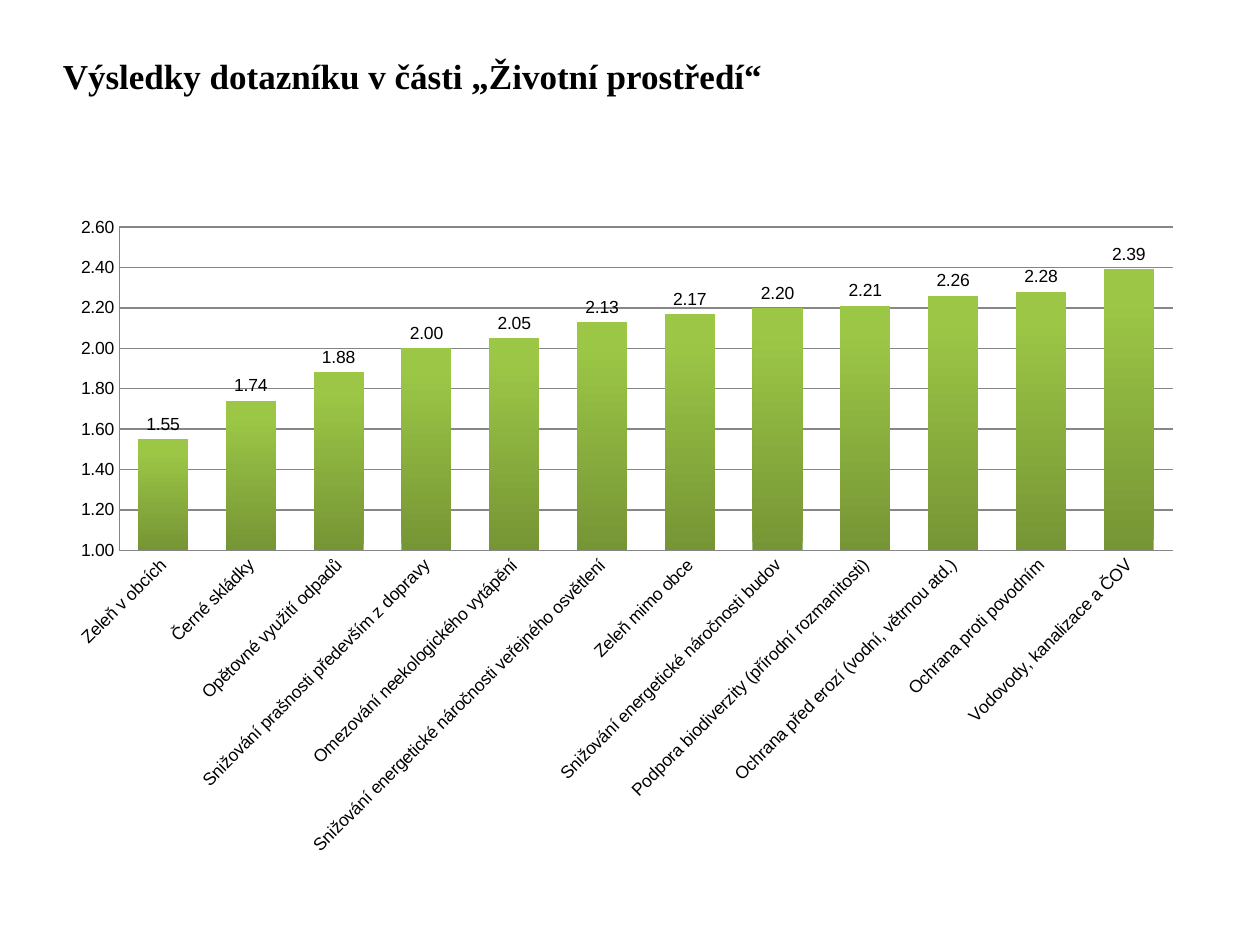
from lxml import etree
from pptx import Presentation
from pptx.chart.data import CategoryChartData
from pptx.dml.color import RGBColor
from pptx.enum.chart import XL_CHART_TYPE, XL_LABEL_POSITION, XL_TICK_MARK
from pptx.enum.text import MSO_ANCHOR, PP_ALIGN
from pptx.oxml.ns import qn
from pptx.util import Cm, Pt

COLUMN = XL_CHART_TYPE.COLUMN_CLUSTERED
OUTSIDE = XL_LABEL_POSITION.OUTSIDE_END
NO_TICK = XL_TICK_MARK.NONE
MIDDLE = MSO_ANCHOR.MIDDLE
CENTER = PP_ALIGN.CENTER

BLACK = "000000"
GRAY = "868686"
FORMAT = "#,##0.00"
SCORES = {
    "Zeleň v obcích": 1.55,
    "Černé skládky": 1.74,
    "Opětovné využití odpadů": 1.88,
    "Snižování prašnosti především z dopravy": 2.00,
    "Omezování neekologického vytápění": 2.05,
    "Snižování energetické náročnosti veřejného osvětlení": 2.13,
    "Zeleň mimo obce": 2.17,
    "Snižování energetické náročnosti budov": 2.20,
    "Podpora biodiverzity (přírodní rozmanitosti)": 2.21,
    "Ochrana před erozí (vodní, větrnou atd.)": 2.26,
    "Ochrana proti povodním": 2.28,
    "Vodovody, kanalizace a ČOV": 2.39,
}


def color(code):
    """Turn a hex string into a colour."""
    return RGBColor.from_string(code)


def style_font(font, name, size):
    """Set a black font of the given name and size."""
    font.name = name
    font.size = Pt(size)
    font.color.rgb = color(BLACK)


def style_line(line):
    """Set the thin gray line of axes and grid."""
    line.color.rgb = color(GRAY)
    line.width = Pt(0.75)


def add_title(slide, text):
    """Add the bold heading, raised above the middle of its box."""
    box = slide.shapes.add_textbox(Cm(0), Cm(0.33), Cm(16.64), Cm(3.18))
    frame = box.text_frame
    frame.word_wrap = True
    frame.vertical_anchor = MIDDLE
    frame.margin_bottom = Cm(0.91)
    para = frame.paragraphs[0]
    para.alignment = CENTER
    run = para.add_run()
    run.text = text
    run.font.bold = True
    style_font(run.font, "Times New Roman", 20)


def place_plot(chart, x, y, w, h):
    """Fix the inner plot area as fractions of the chart."""
    area = chart._chartSpace.find(".//" + qn("c:plotArea"))
    for old in area.findall(qn("c:layout")):
        area.remove(old)
    layout = etree.Element(qn("c:layout"))
    area.insert(0, layout)
    manual = etree.SubElement(layout, qn("c:manualLayout"))
    rules = {"layoutTarget": "inner", "xMode": "edge", "yMode": "edge",
             "x": x, "y": y, "w": w, "h": h}
    for tag, value in rules.items():
        etree.SubElement(manual, qn("c:" + tag)).set("val", str(value))


def style_axes(chart):
    """Set scale, grid, lines and slanted category labels."""
    cats, vals = chart.category_axis, chart.value_axis
    for axis in (cats, vals):
        axis.major_tick_mark = NO_TICK
        axis.minor_tick_mark = NO_TICK
        style_font(axis.tick_labels.font, "Arial", 10)
        style_line(axis.format.line)
    body = cats._element.find(qn("c:txPr")).find(qn("a:bodyPr"))
    body.set("rot", "-2700000")
    body.set("vert", "horz")
    vals.minimum_scale = 1
    vals.maximum_scale = 2.6
    vals.major_unit = 0.2
    vals.has_major_gridlines = True
    style_line(vals.major_gridlines.format.line)
    vals.tick_labels.number_format = FORMAT
    vals.tick_labels.number_format_is_linked = False


def style_bars(plot):
    """Give the columns a green gradient and value labels."""
    plot.gap_width = 75
    plot.vary_by_categories = False
    fill = plot.series[0].format.fill
    fill.gradient()
    fill.gradient_angle = 90
    for stop, code, pos in zip(fill.gradient_stops, ("769535", "9CC746"), (0, 0.9)):
        stop.color.rgb = color(code)
        stop.position = pos
    plot.has_data_labels = True
    labels = plot.data_labels
    labels.show_value = True
    labels.position = OUTSIDE
    labels.number_format = FORMAT
    labels.number_format_is_linked = False
    style_font(labels.font, "Arial", 10)


def add_scores(slide, scores):
    """Add the column chart of survey scores."""
    data = CategoryChartData(number_format=FORMAT)
    data.categories = list(scores)
    data.add_series("Series 1", list(scores.values()))
    chart = slide.shapes.add_chart(
        COLUMN, Cm(1.09), Cm(4.11), Cm(23.01), Cm(13.41), data).chart
    chart.has_legend = False
    chart.has_title = False
    style_font(chart.font, "Arial", 10)
    place_plot(chart, 0.057, 0.035, 0.923, 0.486)
    style_axes(chart)
    style_bars(chart.plots[0])


def main():
    """Build and save the slide."""
    deck = Presentation()
    deck.slide_width = Cm(25.4)
    deck.slide_height = Cm(19.05)
    slide = deck.slides.add_slide(deck.slide_layouts[6])
    add_title(slide, "Výsledky dotazníku v části „Životní prostředí“")
    add_scores(slide, SCORES)
    deck.save("out.pptx")


if __name__ == "__main__":
    main()
